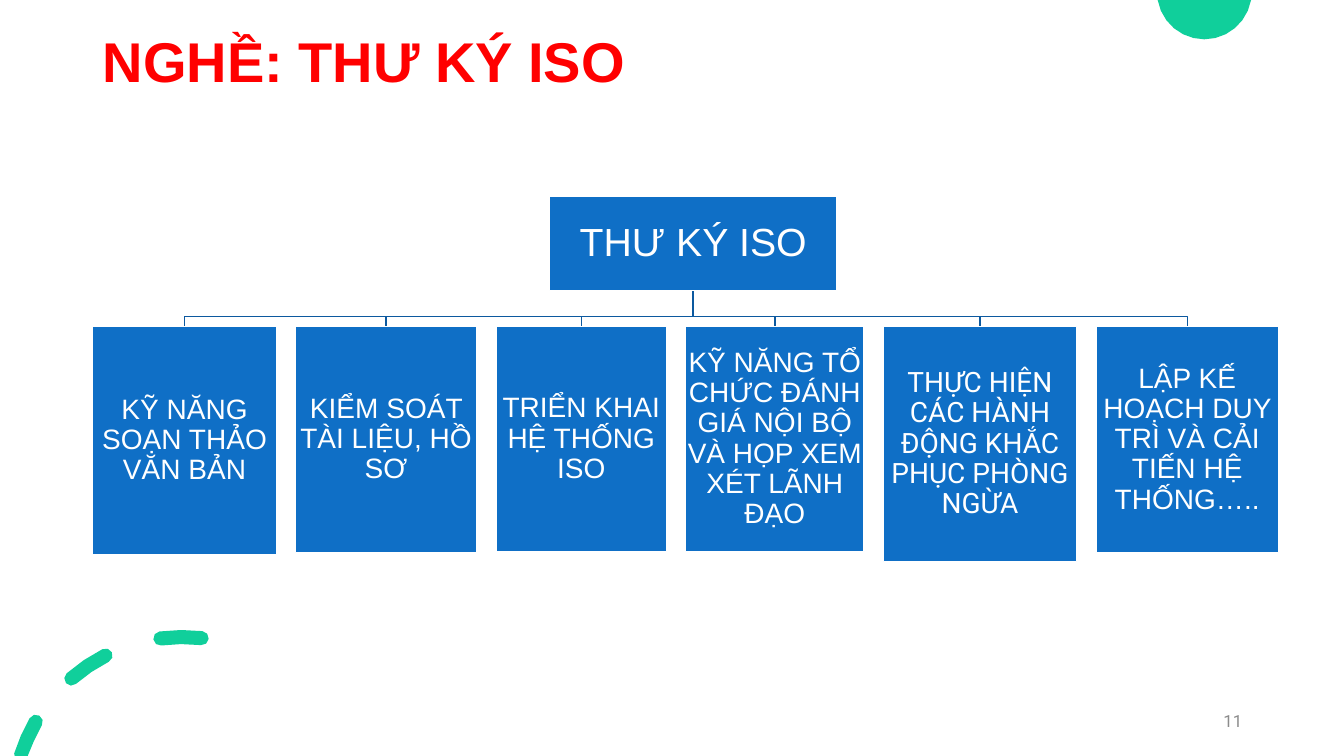
import math

from pptx import Presentation
from pptx.dml.color import RGBColor
from pptx.enum import shapes, text
from pptx.util import Pt

PX = 9144  # 100 px to the inch
SLIDE_W, SLIDE_H = 1333, 750

GREEN = RGBColor(0x10, 0xCF, 0x9B)
BLUE = RGBColor(0x0F, 0x6F, 0xC6)
DARK_BLUE = RGBColor(0x0C, 0x59, 0x9F)
RED = RGBColor(0xFF, 0x00, 0x00)
GRAY = RGBColor(0x8C, 0x8C, 0x8C)
WHITE = RGBColor(0xFF, 0xFF, 0xFF)

# text, width, height, font
SKILLS = [
    ("KỸ NĂNG SOẠN THẢO VĂN BẢN", 182, 226, "Arial"),
    ("KIỂM SOÁT TÀI LIỆU, HỒ SƠ", 180, 224, "Arial"),
    ("TRIỂN KHAI HỆ THỐNG ISO", 169, 223, "Arial"),
    ("KỸ NĂNG TỔ CHỨC ĐÁNH GIÁ NỘI BỘ VÀ HỌP XEM XÉT LÃNH ĐẠO", 177, 223, "Arial"),
    ("THỰC HIỆN CÁC HÀNH ĐỘNG KHẮC PHỤC PHÒNG NGỪA", 192, 233, "Roboto"),
    ("LẬP KẾ HOẠCH DUY TRÌ VÀ CẢI TIẾN HỆ THỐNG…..", 181, 224, "Arial"),
]


def px(*lengths):
    return [round(n * PX) for n in lengths]


def arc(cx, cy, r, start, stop, steps):
    """Points on a circle; degrees run clockwise from the right."""
    angles = [math.radians(start + (stop - start) * i / steps) for i in range(steps + 1)]
    return [(cx + r * math.cos(a), cy + r * math.sin(a)) for a in angles]


def add_outline(s, contours, close=True):
    """Draw one freeform made of one or more lists of points."""
    contours = [[px(*point) for point in points] for points in contours]
    builder = s.shapes.build_freeform(*contours[0][0], scale=1.0)
    for i, points in enumerate(contours):
        if i:
            builder.move_to(*points[0])
        builder.add_line_segments(points[1:], close=close)
    sp = builder.convert_to_shape()
    sp.shadow.inherit = False
    return sp


def fill_green(sp):
    sp.fill.solid()
    sp.fill.fore_color.rgb = GREEN
    sp.line.fill.background()


def dash(cx, cy, r, half, start, stop):
    """Outline of a thick arc with round ends, cut off at the slide's bottom."""
    (x0, y0), (x1, y1) = arc(cx, cy, r, start, stop, 1)
    points = arc(cx, cy, r + half, start, stop, 2)
    points += arc(x1, y1, half, stop, stop + 180, 4)[1:-1]
    points += arc(cx, cy, r - half, stop, start, 2)
    if y0 < SLIDE_H:
        points += arc(x0, y0, half, start + 180, start + 360, 4)[1:-1]
    return [(x, min(y, SLIDE_H)) for x, y in points]


def add_decoration(s):
    fill_green(add_outline(s, [arc(1194.5, -8, 47, 10, 170, 12)]))
    spans = [(197.5, 210), (229, 243), (262.5, 276.5)]
    fill_green(add_outline(s, [dash(181, 800, 168, 7, *span) for span in spans]))


def format_text(tf, words, size, font, color, align):
    tf.word_wrap = True
    tf.auto_size = text.MSO_AUTO_SIZE.NONE
    tf.vertical_anchor = text.MSO_ANCHOR.MIDDLE
    p = tf.paragraphs[0]
    p.text = words
    p.alignment = align
    p.font.size = Pt(size)
    p.font.name = font
    p.font.color.rgb = color
    return p


def add_title(s, box):
    title = s.shapes.title
    title.left, title.top, title.width, title.height = px(*box)
    p = format_text(title.text_frame, "NGHỀ: THƯ KÝ ISO", 40, "Arial", RED,
                    text.PP_ALIGN.LEFT)
    p.line_spacing = 0.9
    p.font.bold = True


def add_slide_number(s, box):
    sp = s.shapes.add_textbox(*px(*box))
    format_text(sp.text_frame, "11", 12, "Roboto", GRAY, text.PP_ALIGN.RIGHT)


def add_node(s, box, words, size, font, inset):
    sp = s.shapes.add_shape(shapes.MSO_SHAPE.RECTANGLE, *px(*box))
    sp.shadow.inherit = False
    sp.fill.solid()
    sp.fill.fore_color.rgb = BLUE
    sp.line.color.rgb = WHITE
    sp.line.width = Pt(1)
    tf = sp.text_frame
    tf.margin_left = tf.margin_right = tf.margin_top = tf.margin_bottom = inset * PX
    p = format_text(tf, words, size, font, WHITE, text.PP_ALIGN.CENTER)
    p.line_spacing = 0.9


def add_branch(s, x0, y0, x1, y1):
    """Draw the bent line from the root down to one skill."""
    bend = y1 - 10
    sp = add_outline(s, [[(x0, y0), (x0, bend), (x1, bend), (x1, y1)]], close=False)
    sp.fill.background()
    sp.line.color.rgb = DARK_BLUE
    sp.line.width = Pt(1)


def add_org_chart(s, left, top):
    root = (left + 453, top, 285, 93)
    skills_top, gap = top + 129, 19
    boxes, x = [], left
    for _, width, height, _ in SKILLS:
        boxes.append((x, skills_top, width, height))
        x += width + gap

    for x, y, width, _ in reversed(boxes):
        add_branch(s, root[0] + root[2] / 2, top + root[3], x + width / 2, y)
    add_node(s, root, "THƯ KÝ ISO", 28, "Arial", 2)
    for box, (words, _, _, font) in zip(boxes, SKILLS):
        add_node(s, box, words, 20, font, 1)


def main():
    prs = Presentation()
    prs.slide_width, prs.slide_height = px(SLIDE_W, SLIDE_H)
    s = prs.slides.add_slide(prs.slide_layouts[5])
    add_decoration(s)
    add_title(s, (92, 18, 1177, 91))
    add_org_chart(s, 92, 195)
    add_slide_number(s, (942, 695, 300, 40))
    prs.save("out.pptx")


if __name__ == "__main__":
    main()
